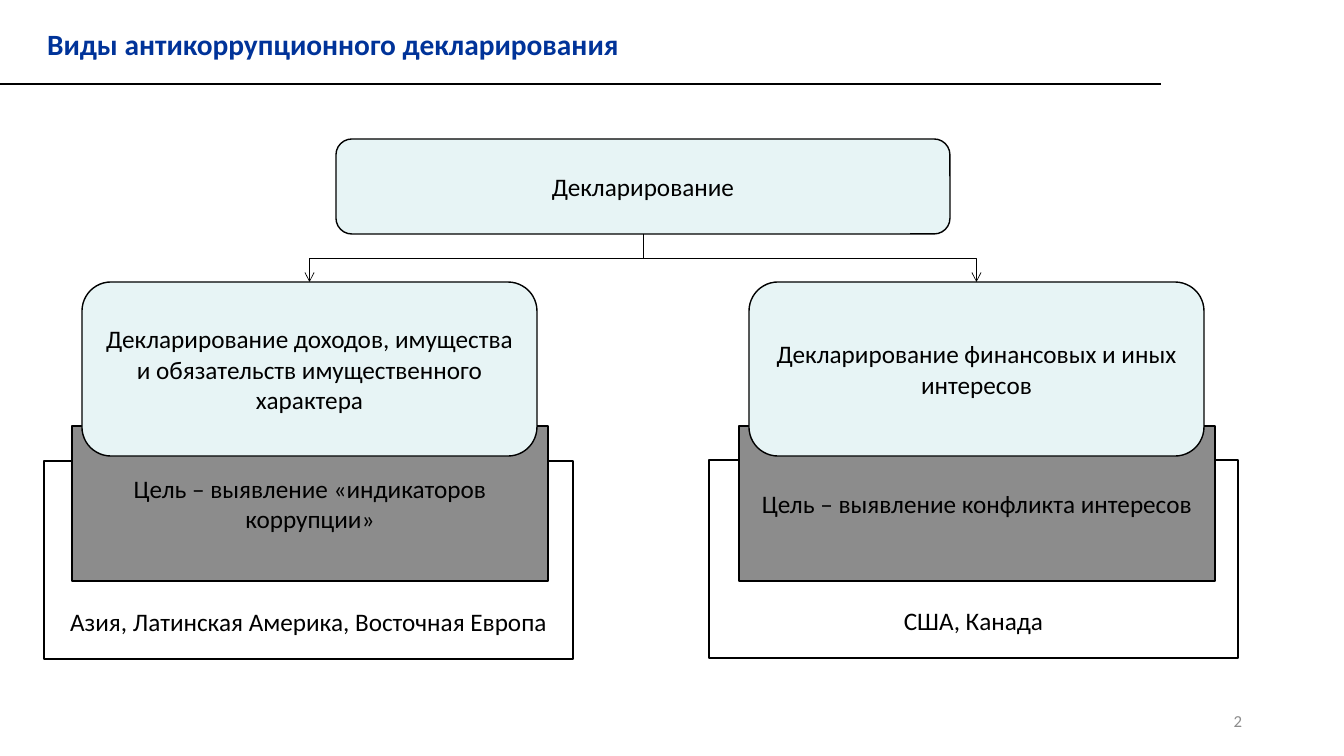
from lxml.etree import SubElement
from pptx import Presentation
from pptx.dml.color import RGBColor
from pptx.enum.shapes import MSO_CONNECTOR as Connector, MSO_SHAPE as Shape
from pptx.enum.text import MSO_ANCHOR as Anchor, PP_ALIGN as Align
from pptx.oxml.ns import qn
from pptx.util import Emu, Pt

EMU_PER_PX = 914400 / 100.8
FONT = "Calibri"
BLACK, WHITE, GREY, PALE, NAVY = "000000", "FFFFFF", "8C8C8C", "E7F4F5", "003399"
COLUMN_STEP = 667


def px(value):
    return Emu(round(value * EMU_PER_PX))


def color(hex_code):
    return RGBColor.from_string(hex_code)


def write(shape, text, size=18, hex_code=BLACK, bold=False,
          align=Align.CENTER, anchor=Anchor.MIDDLE):
    frame = shape.text_frame
    frame.word_wrap = True
    frame.vertical_anchor = anchor
    paragraph = frame.paragraphs[0]
    paragraph.alignment = align
    run = paragraph.add_run()
    run.text = text
    run.font.name, run.font.size, run.font.bold = FONT, Pt(size), bold
    run.font.color.rgb = color(hex_code)


def add_title(slide, text):
    title = slide.shapes.title
    title.left, title.top, title.width, title.height = px(37), px(21), px(894), px(45)
    write(title, text, 21, NAVY, bold=True, align=Align.LEFT, anchor=Anchor.TOP)


def add_box(slide, kind, left, top, width, height, fill, text, anchor=Anchor.MIDDLE):
    box = slide.shapes.add_shape(kind, px(left), px(top), px(width), px(height))
    box.shadow.inherit = False
    box.fill.solid()
    box.fill.fore_color.rgb = color(fill)
    box.line.color.rgb = color(BLACK)
    box.line.width = Pt(1)
    write(box, text, anchor=anchor)
    return box


def style_line(connector, width):
    connector.line.color.rgb = color(BLACK)
    connector.line.width = Pt(width)
    SubElement(connector._element.spPr, qn("a:effectLst"))


def add_rule(slide, y, right):
    rule = slide.shapes.add_connector(Connector.STRAIGHT, 0, px(y), px(right), px(y))
    style_line(rule, 1.5)


def add_branch(slide, parent, child):
    """Elbow arrow from the bottom of parent to the top of child."""
    start_x, start_y = parent.left + parent.width // 2, parent.top + parent.height
    end_x, end_y = child.left + child.width // 2, child.top
    branch = slide.shapes.add_connector(Connector.ELBOW, start_x, start_y, end_x, end_y)
    branch.begin_connect(parent, 2)
    branch.end_connect(child, 0)

    # A vertical-first elbow is a horizontal one turned by a quarter
    drop, run = end_y - start_y, abs(end_x - start_x)
    branch.left = Emu((start_x + end_x - drop) // 2)
    branch.top = Emu((start_y + end_y - run) // 2)
    branch.width, branch.height = Emu(drop), Emu(run)
    goes_right = end_x > start_x
    transform = branch._element.spPr.find(qn("a:xfrm"))
    transform.set("rot", "16200000" if goes_right else "5400000")
    transform.set("flipH", "1" if goes_right else "0")
    transform.set("flipV", "0")

    style_line(branch, 0.5)
    SubElement(branch.line._get_or_add_ln(), qn("a:tailEnd"), type="arrow")


def add_column(slide, shift, region_left, region_top, kind, goal, regions):
    """Stack regions, goal and kind from back to front; return the kind box."""
    region_box = add_box(slide, Shape.RECTANGLE, region_left, region_top, 529, 198,
                         WHITE, regions, Anchor.BOTTOM)
    region_box.text_frame.margin_bottom = px(22)
    add_box(slide, Shape.RECTANGLE, 72 + shift, 426, 476, 155, GREY, goal)
    return add_box(slide, Shape.ROUNDED_RECTANGLE, 82 + shift, 282, 455, 174, PALE, kind)


def add_page_number(slide, number):
    box = slide.shapes.add_textbox(px(950), px(701), px(302), px(40))
    write(box, number, 12, GREY, align=Align.RIGHT)


def main():
    presentation = Presentation()
    presentation.slide_width, presentation.slide_height = px(1344), px(756)
    slide = presentation.slides.add_slide(presentation.slide_layouts[5])

    # Heading
    add_title(slide, "Виды антикоррупционного декларирования")
    add_rule(slide, 84, 1161)

    # Tree of declaration kinds
    root = add_box(slide, Shape.ROUNDED_RECTANGLE, 336, 139, 614, 95, PALE,
                   "Декларирование")
    columns = [
        (0, 44, 461,
         "Декларирование доходов, имущества и обязательств имущественного характера",
         "Цель – выявление «индикаторов коррупции»",
         "Азия, Латинская Америка, Восточная Европа"),
        (COLUMN_STEP, 709, 460,
         "Декларирование финансовых и иных интересов",
         "Цель – выявление конфликта интересов",
         "США, Канада"),
    ]
    for column in columns:
        add_branch(slide, root, add_column(slide, *column))

    # Footer
    add_page_number(slide, "2")
    presentation.save("out.pptx")


if __name__ == "__main__":
    main()
